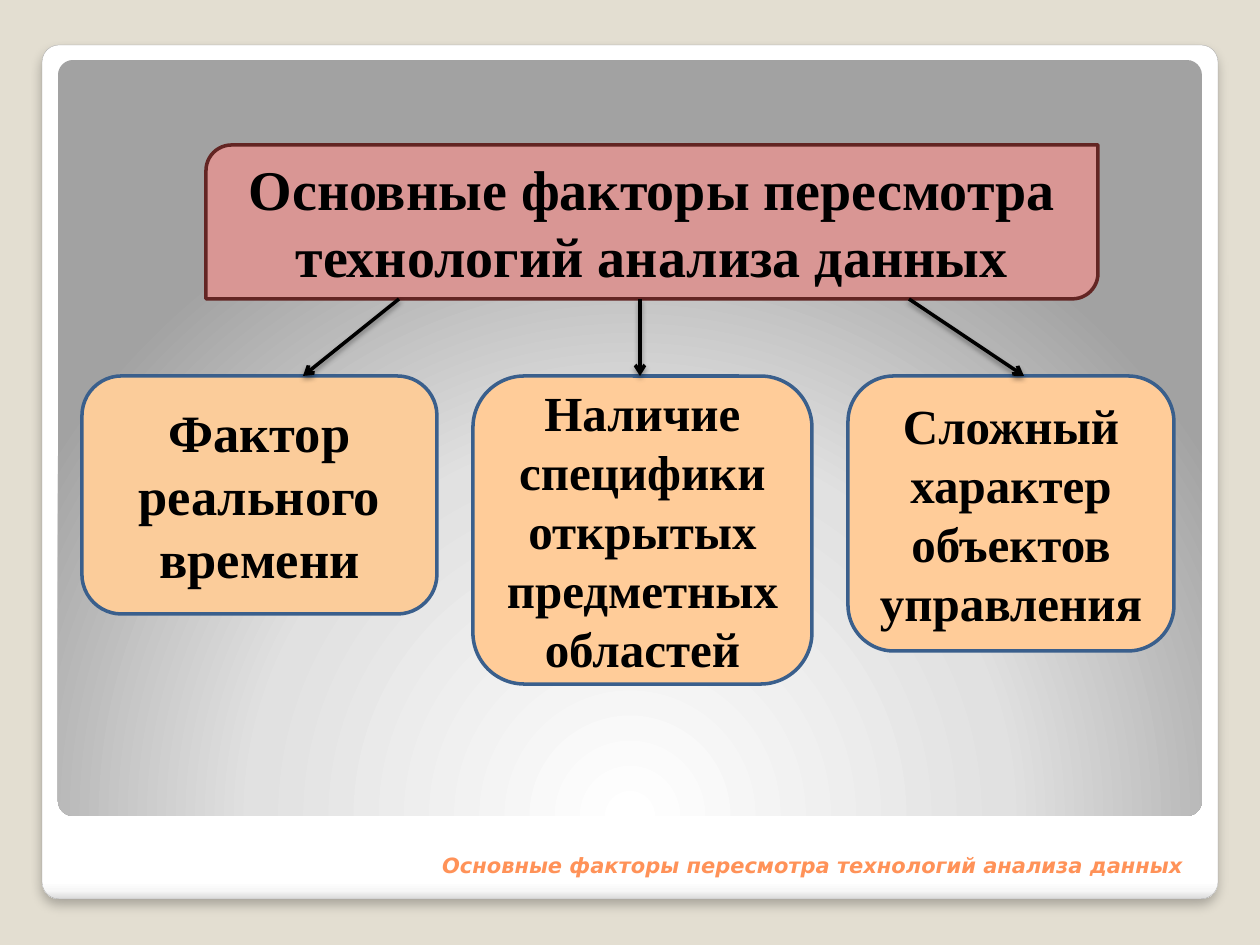
from lxml.etree import SubElement
from pptx import Presentation
from pptx.dml.color import RGBColor
from pptx.enum.shapes import MSO_CONNECTOR, MSO_SHAPE
from pptx.enum.text import MSO_ANCHOR, PP_ALIGN
from pptx.oxml import parse_xml
from pptx.oxml.ns import nsdecls, qn
from pptx.util import Emu, Pt

PX = 914400 / 126
COLOURS = {
    "backdrop": "E3DED1", "card_edge": "A4A4A4", "title": "FF9258",
    "heading": "D99694", "heading_edge": "632523",
    "real_time": "FBCC9A", "factor": "FFCC99", "factor_edge": "3A5F8C",
    "ink": "000000",
}
CARD_STOPS = [(0, "FFFFFF"), (98, "FFFFFF"), (99, "F7F7F7"), (100, "DADADA")]
PANEL_STOPS = [(0, "FFFFFF"), (55, "E1E1E1"), (100, "A2A2A2")]
DOWNWARD = '<a:lin ang="5400000" scaled="0"/>'
FROM_BELOW = ('<a:path path="circle"><a:fillToRect l="50000" t="175000" '
              'r="50000" b="-75000"/></a:path>')
TOPIC = "Основные факторы пересмотра технологий анализа данных"
HEADING_BOTTOM, FACTOR_TOP = 299, 376
FACTORS = [
    ("Фактор реального времени", 82, 355, 238, 30, "real_time"),
    ("Наличие специфики открытых предметных областей", 473, 339, 308, 28, "factor"),
    ("Сложный характер объектов управления", 848, 326, 275, 28, "factor"),
]
ARROWS = [(399, 303), (640, 640), (909, 1024)]


def px(*lengths):
    """Turn pixel lengths into EMU."""
    return [Emu(round(length * PX)) for length in lengths]


def rgb(name):
    """Look up a named colour."""
    return RGBColor.from_string(COLOURS[name])


class SlideStyle:
    """Hold the slide and draw its elements in one style."""

    def __init__(self, slide):
        """Keep the slide and paint its background."""
        self.slide = slide
        self.shapes = slide.shapes
        backdrop = slide.background.fill
        backdrop.solid()
        backdrop.fore_color.rgb = rgb("backdrop")

    def outline(self, shape, colour, width):
        """Draw a solid line around or along a shape."""
        shape.line.color.rgb = rgb(colour)
        shape.line.width = Pt(width)

    def shadow(self, shape, alpha, blur, distance):
        """Give a shape a soft shadow that falls straight down."""
        shape.element.spPr.append(parse_xml(
            f'<a:effectLst {nsdecls("a")}><a:outerShdw blurRad="{Pt(blur)}" '
            f'dist="{Pt(distance)}" dir="5400000" rotWithShape="0">'
            f'<a:srgbClr val="000000"><a:alpha val="{alpha * 1000}"/></a:srgbClr>'
            '</a:outerShdw></a:effectLst>'))

    def label(self, shape, text, align, anchor, colour, **font_values):
        """Put one formatted paragraph into a shape."""
        frame = shape.text_frame
        frame.text = text
        frame.word_wrap = True
        frame.vertical_anchor = anchor
        paragraph = frame.paragraphs[0]
        paragraph.alignment = align
        font = paragraph.runs[0].font
        for name, value in font_values.items():
            setattr(font, name, value)
        font.color.rgb = rgb(colour)

    def panel(self, bounds, stops, direction):
        """Draw a slightly rounded panel with a gradient."""
        panel = self.shapes.add_shape(MSO_SHAPE.ROUNDED_RECTANGLE, *px(*bounds))
        panel.adjustments[0] = 0.02
        panel.line.fill.background()
        stop_list = "".join(
            f'<a:gs pos="{position * 1000}"><a:srgbClr val="{colour}"/></a:gs>'
            for position, colour in stops)
        panel.element.spPr.insert(2, parse_xml(
            f'<a:gradFill {nsdecls("a")} rotWithShape="1">'
            f'<a:gsLst>{stop_list}</a:gsLst>{direction}</a:gradFill>'))
        return panel

    def title(self, text, bounds):
        """Place the title in front of the panels."""
        title = self.shapes.title
        places = dict(zip(("left", "top", "width", "height"), px(*bounds)))
        for name, value in places.items():
            setattr(title, name, value)
        self.label(title, text, PP_ALIGN.RIGHT, MSO_ANCHOR.BOTTOM, "title",
                   size=Pt(12), name="DejaVu Sans", bold=True, italic=True)
        title.element.getparent().append(title.element)

    def box(self, kind, text, bounds, size, fill, edge):
        """Draw a filled box with centred bold text."""
        box = self.shapes.add_shape(kind, *px(*bounds))
        box.shadow.inherit = False
        box.fill.solid()
        box.fill.fore_color.rgb = rgb(fill)
        self.outline(box, edge, 2)
        self.label(box, text, PP_ALIGN.CENTER, MSO_ANCHOR.MIDDLE, "ink",
                   size=Pt(size), name="Times New Roman", bold=True)

    def arrow(self, start, end):
        """Draw an arrow from the heading to a factor."""
        arrow = self.shapes.add_connector(
            MSO_CONNECTOR.STRAIGHT, *px(start, HEADING_BOTTOM, end, FACTOR_TOP))
        self.outline(arrow, "ink", 2)
        SubElement(arrow.element.spPr.find(qn("a:ln")), qn("a:tailEnd"), type="arrow")
        self.shadow(arrow, 38, 3.1, 1.6)


def main():
    """Build the slide and save it."""
    deck = Presentation()
    deck.slide_width, deck.slide_height = px(1260, 945)
    style = SlideStyle(deck.slides.add_slide(deck.slide_layouts[5]))
    card = style.panel((42, 45, 1176, 854), CARD_STOPS, DOWNWARD)
    style.outline(card, "card_edge", 0.16)
    style.shadow(card, 25, 6, 4)
    panel = style.panel((58, 60, 1144, 756), PANEL_STOPS, FROM_BELOW)
    panel.shadow.inherit = False
    style.title(TOPIC, (54, 839, 1142, 45))
    style.box(MSO_SHAPE.ROUND_2_DIAG_RECTANGLE, TOPIC,
              (206, 145, 892, HEADING_BOTTOM - 145), 32, "heading", "heading_edge")
    for text, left, width, height, size, fill in FACTORS:
        style.box(MSO_SHAPE.ROUNDED_RECTANGLE, text,
                  (left, FACTOR_TOP, width, height), size, fill, "factor_edge")
    for start, end in ARROWS:
        style.arrow(start, end)
    deck.save("out.pptx")


if __name__ == "__main__":
    main()
